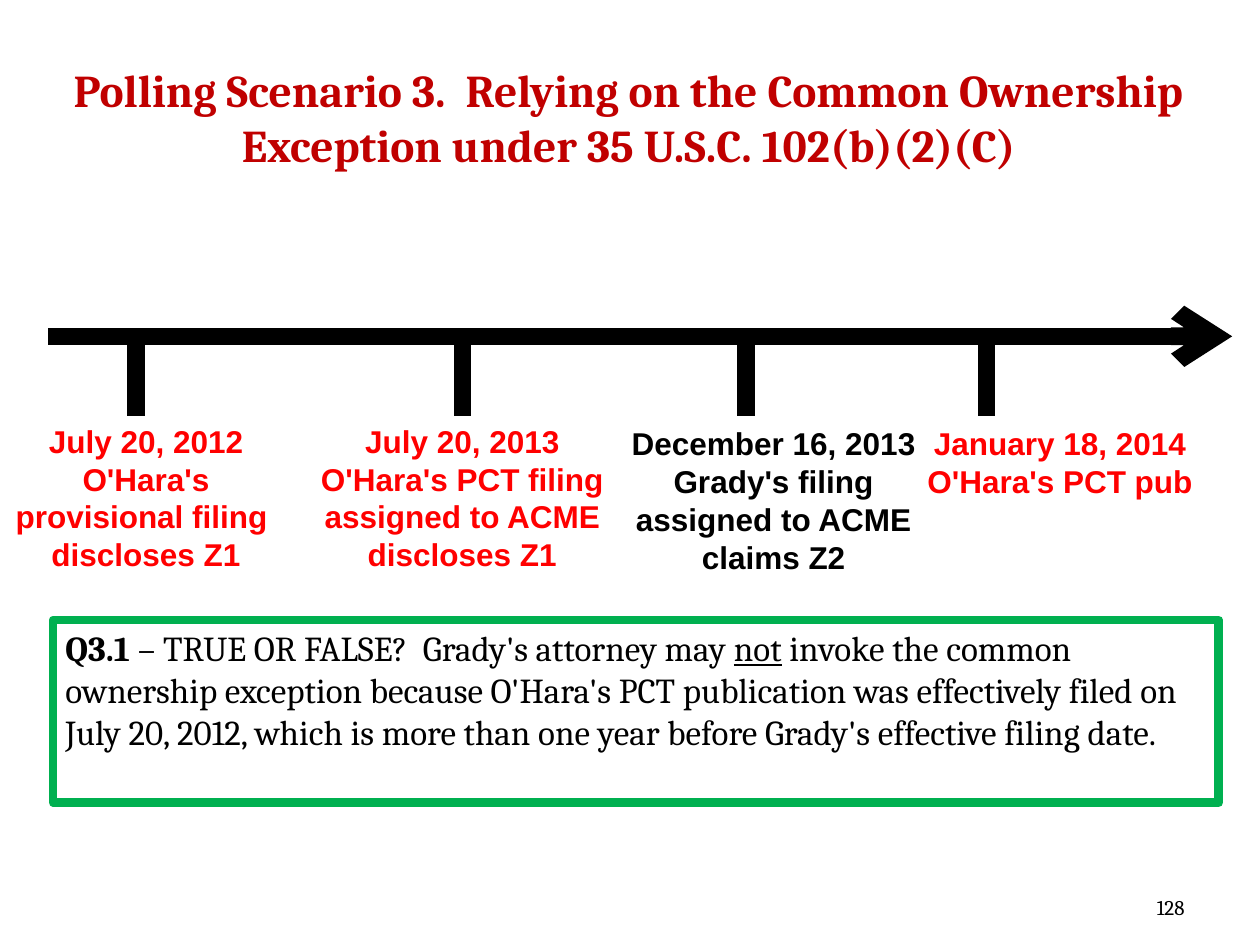
"""Build the polling scenario slide: a timeline of four filings and a true-or-false question."""
from lxml.etree import SubElement
from pptx import Presentation
from pptx.dml.color import RGBColor
from pptx.enum.shapes import MSO_CONNECTOR, MSO_SHAPE
from pptx.enum.text import MSO_ANCHOR, MSO_AUTO_SIZE, PP_ALIGN
from pptx.oxml.ns import qn
from pptx.util import Cm, Pt

BLACK = RGBColor(0x00, 0x00, 0x00)
RED = RGBColor(0xFF, 0x00, 0x00)
DARK_RED = RGBColor(0xC0, 0x00, 0x00)
GREEN = RGBColor(0x00, 0xB0, 0x50)

TITLE = "Polling Scenario 3.  Relying on the Common Ownership Exception under 35 U.S.C. 102(b)(2)(C)"
PAGE = "128"
QUESTION = [
    ("Q3.1", True, False),
    (" – TRUE OR FALSE?  Grady's attorney may ", False, False),
    ("not", False, True),
    (" invoke the common ownership exception because O'Hara's PCT publication was effectively "
     "filed on July 20, 2012, which is more than one year before Grady's effective filing date.",
     False, False),
]
EVENTS = [
    (2.74, (0, 8.38, 5.89, 3.33), RED,
     ["July 20, 2012", "O'Hara's provisional filing  discloses Z1"]),
    (9.32, (5.28, 8.38, 8.08, 3.33), RED,
     ["July 20, 2013", "O'Hara's PCT filing assigned to ACME discloses Z1"]),
    (15.04, (12.27, 8.43, 6.65, 3.33), BLACK,
     ["December 16, 2013", "Grady's filing assigned to ACME", "claims Z2"]),
    (19.89, (18.21, 8.43, 6.32, 1.8), RED,
     ["January 18, 2014", "O'Hara's PCT pub"]),
]
AXIS_Y, AXIS_LEFT, AXIS_RIGHT = 6.78, 0.97, 24.84
TICK_TOP, TICK_BOTTOM = 6.88, 8.38


def style(p, font, size, color, align, bold=None):
    p.alignment = align
    for r in p.runs:
        r.font.name, r.font.size = font, Pt(size)
        r.font.color.rgb = color
        if bold is not None:
            r.font.bold = bold


def add_line(s, x1, y1, x2, y2, arrow=False):
    line = s.shapes.add_connector(MSO_CONNECTOR.STRAIGHT, Cm(x1), Cm(y1), Cm(x2), Cm(y2))
    line.line.color.rgb = BLACK
    line.line.width = Pt(10)
    if arrow:
        SubElement(line.line._get_or_add_ln(), qn("a:tailEnd"), type="arrow")
    SubElement(line._element.spPr, qn("a:effectLst"))


def add_text(s, box, lines, font, size, color, align, bold=None):
    tf = s.shapes.add_textbox(*map(Cm, box)).text_frame
    tf.word_wrap = True
    tf.text = "\n".join(lines)
    for p in tf.paragraphs:
        style(p, font, size, color, align, bold)
    return tf


def add_question(s):
    sp = s.shapes.add_shape(MSO_SHAPE.RECTANGLE, Cm(1.07), Cm(12.5), Cm(23.5), Cm(3.68))
    sp.shadow.inherit = False
    sp.fill.background()
    sp.line.color.rgb = GREEN
    sp.line.width = Pt(5)
    tf = sp.text_frame
    tf.word_wrap = True
    tf.vertical_anchor = MSO_ANCHOR.TOP
    p = tf.paragraphs[0]
    for text, bold, underline in QUESTION:
        r = p.add_run()
        r.text = text
        r.font.bold, r.font.underline = bold, underline
    style(p, "Cambria", 20, BLACK, PP_ALIGN.LEFT)


def main():
    prs = Presentation()
    prs.slide_width, prs.slide_height = Cm(25.4), Cm(19.05)
    s = prs.slides.add_slide(prs.slide_layouts[5])

    title = s.shapes.title
    title.left, title.top, title.width, title.height = map(Cm, (0.2, 0.76, 24.97, 3.18))
    tf = title.text_frame
    tf.text = TITLE
    tf.auto_size = MSO_AUTO_SIZE.NONE
    tf.vertical_anchor = MSO_ANCHOR.MIDDLE
    style(tf.paragraphs[0], "Cambria", 26, DARK_RED, PP_ALIGN.CENTER, True)

    add_line(s, AXIS_LEFT, AXIS_Y, AXIS_RIGHT, AXIS_Y, arrow=True)
    for x, box, color, lines in EVENTS:
        add_line(s, x, TICK_TOP, x, TICK_BOTTOM)
        add_text(s, box, lines, "Arial", 18, color, PP_ALIGN.CENTER, True)

    add_question(s)
    page = add_text(s, (22.86, 17.35, 1.27, 1.32), [PAGE], "Cambria", 12, BLACK, PP_ALIGN.RIGHT)
    page.vertical_anchor = MSO_ANCHOR.BOTTOM
    prs.save("out.pptx")


if __name__ == "__main__":
    main()
